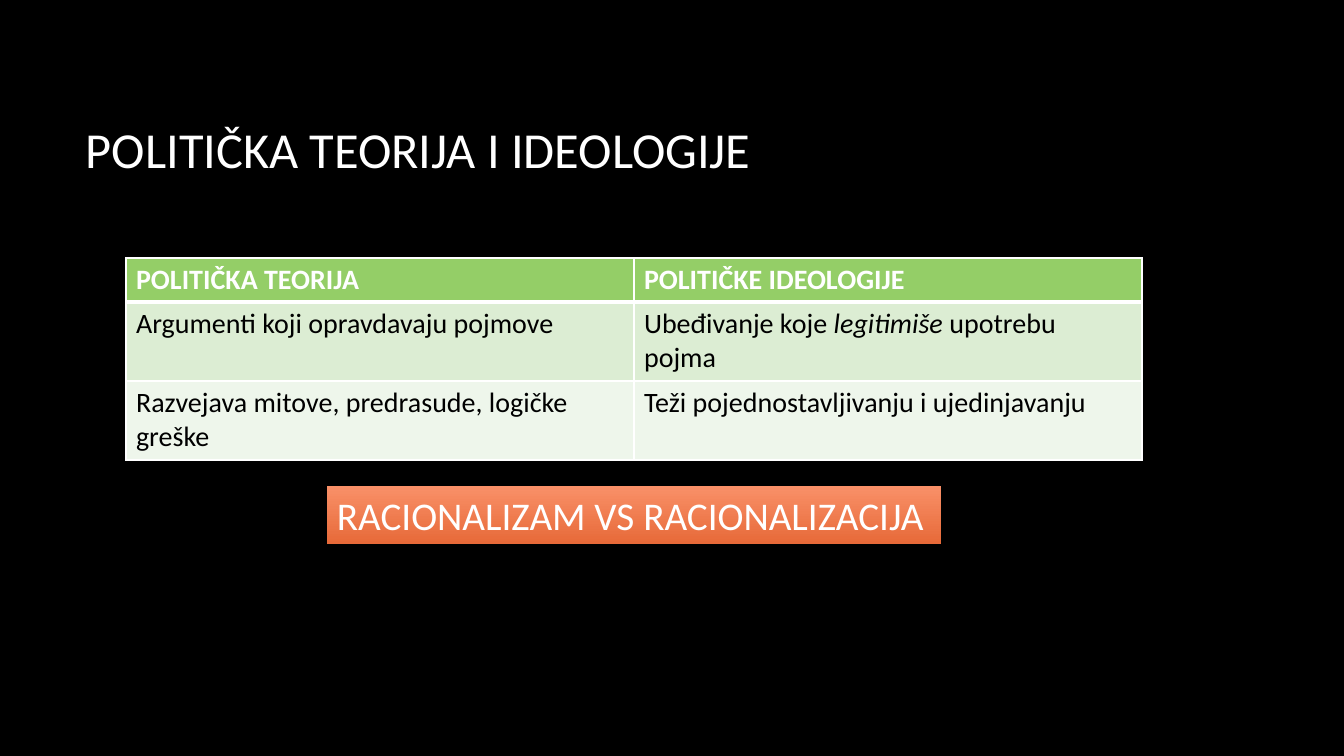
from lxml.etree import SubElement
from pptx import Presentation
from pptx.dml.color import RGBColor
from pptx.enum.shapes import MSO_SHAPE as Shape
from pptx.enum.text import MSO_ANCHOR as Anchor, MSO_AUTO_SIZE as AutoSize, PP_ALIGN as Align
from pptx.oxml.ns import qn
from pptx.util import Emu, Pt

BLACK = RGBColor(0x00, 0x00, 0x00)
WHITE = RGBColor(0xFF, 0xFF, 0xFF)
HEADER_GREEN = RGBColor(0x94, 0xCE, 0x67)
BAND_GREENS = (RGBColor(0xDC, 0xED, 0xD3), RGBColor(0xEE, 0xF6, 0xEB))
ORANGE_TOP = RGBColor(0xF9, 0x90, 0x68)
ORANGE_BOTTOM = RGBColor(0xE7, 0x6A, 0x39)

WIDTH, HEIGHT = 1344, 756
EMU_PER_PX = 12192000 / WIDTH


def px(*lengths):
    return [Emu(round(length * EMU_PER_PX)) for length in lengths]


class SlideBuilder:
    font_name = "Calibri"

    def __init__(self, presentation, background):
        self.slide = presentation.slides.add_slide(presentation.slide_layouts[6])
        fill = self.slide.background.fill
        fill.solid()
        fill.fore_color.rgb = background

    def add_runs(self, paragraph, parts, size, color, bold=False):
        """Parts alternate between upright and italic."""
        for index, part in enumerate(parts):
            run = paragraph.add_run()
            run.text = part
            font = run.font
            font.name, font.size, font.bold = self.font_name, Pt(size), bold
            font.italic = index % 2 == 1
            font.color.rgb = color

    def text(self, left, top, width, height, text, size, color):
        frame = self.slide.shapes.add_textbox(*px(left, top, width, height)).text_frame
        frame.word_wrap = True
        frame.vertical_anchor = Anchor.MIDDLE
        self.add_runs(frame.paragraphs[0], [text], size, color)

    def gradient_box(self, left, top, width, height, text, size, color, stops):
        shape = self.slide.shapes.add_shape(Shape.RECTANGLE, *px(left, top, width, height))
        shape.shadow.inherit = False
        shape.line.fill.background()
        shape.fill.gradient()
        shape.fill.gradient_angle = 270
        for stop, stop_color in zip(shape.fill.gradient_stops, stops):
            stop.color.rgb = stop_color
        frame = shape.text_frame
        frame.word_wrap = False
        frame.auto_size = AutoSize.SHAPE_TO_FIT_TEXT
        frame.vertical_anchor = Anchor.TOP
        frame.paragraphs[0].alignment = Align.LEFT
        self.add_runs(frame.paragraphs[0], [text], size, color)

    def border(self, cell, color, widths):
        properties = cell._tc.get_or_add_tcPr()
        for side, width in zip("LRTB", widths):
            line = SubElement(properties, qn(f"a:ln{side}"), w=str(Pt(width)))
            SubElement(SubElement(line, qn("a:solidFill")), qn("a:srgbClr"), val=str(color))

    def table(self, left, top, width, row_heights, rows, size):
        frame = self.slide.shapes.add_table(
            len(rows), len(rows[0]), *px(left, top, width, sum(row_heights)))
        table = frame.table
        table.horz_banding = False
        for row, height in zip(table.rows, px(*row_heights)):
            row.height = height
        for row_index, row in enumerate(rows):
            header = row_index == 0
            for column_index, parts in enumerate(row):
                cell = table.cell(row_index, column_index)
                # The rule under the header is shared with the row below
                self.border(cell, WHITE, (1, 1, 3 if row_index == 1 else 1, 3 if header else 1))
                cell.fill.solid()
                cell.fill.fore_color.rgb = HEADER_GREEN if header else BAND_GREENS[(row_index - 1) % 2]
                self.add_runs(cell.text_frame.paragraphs[0], parts, size,
                              WHITE if header else BLACK, bold=header)


def main():
    presentation = Presentation()
    presentation.slide_width, presentation.slide_height = px(WIDTH, HEIGHT)
    builder = SlideBuilder(presentation, BLACK)

    # Title
    builder.text(76, 68, 1117, 160, "POLITIČKA TEORIJA I IDEOLOGIJE", 36, WHITE)

    # Comparison of theory and ideology
    builder.table(126, 258, 1016, (44, 79, 79), [
        (["POLITIČKA TEORIJA"], ["POLITIČKE IDEOLOGIJE"]),
        (["Argumenti koji opravdavaju pojmove"],
         ["Ubeđivanje koje ", "legitimiše ", "upotrebu pojma"]),
        (["Razvejava mitove, predrasude, logičke greške"],
         ["Teži pojednostavljivanju i ujedinjavanju"]),
    ], 20)

    # Conclusion
    builder.gradient_box(327, 486, 614, 58, "RACIONALIZAM VS RACIONALIZACIJA", 28, WHITE,
                         (ORANGE_TOP, ORANGE_BOTTOM))

    presentation.save("out.pptx")


if __name__ == "__main__":
    main()
